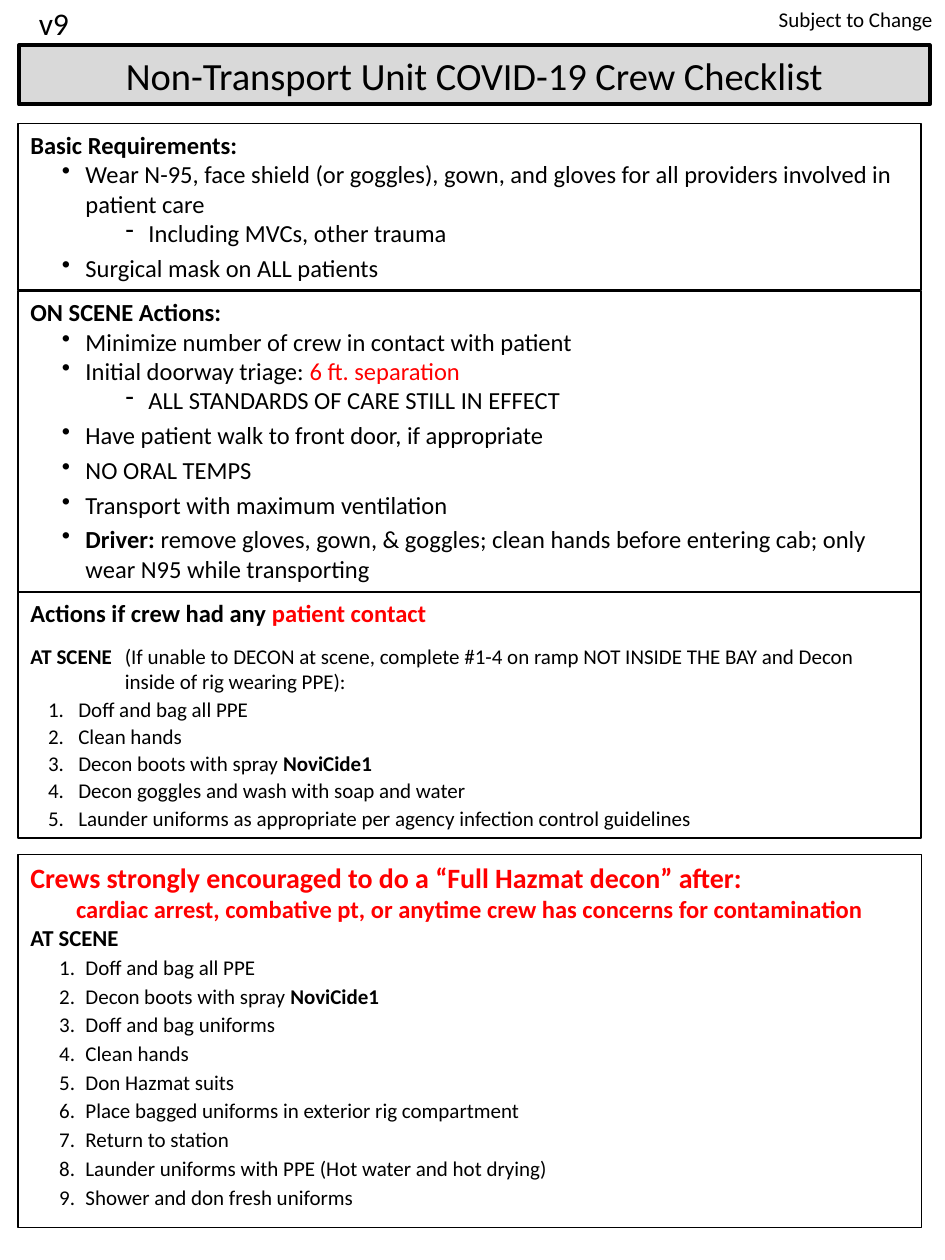
from collections import namedtuple

from lxml.etree import SubElement
from pptx import Presentation
from pptx.dml.color import RGBColor
from pptx.enum.shapes import MSO_SHAPE as Shape
from pptx.enum.text import MSO_ANCHOR as Anchor, PP_ALIGN as Align
from pptx.oxml.ns import qn
from pptx.util import Pt

BLACK, RED, GREY = "000000", "FF0000", "D9D9D9"

Look = namedtuple("Look", "size bold color align indent hang before bullet level",
                  defaults=(False, BLACK, Align.LEFT, 0, 0, 0, None, 0))

HEADING = Look(14, True)
BULLET = Look(14, indent=31.5, hang=13.5, bullet="•")
SPACED_BULLET = BULLET._replace(before=3)
DASH = Look(14, indent=67.5, hang=13, bullet="-", level=1)
SCENE_NOTE = Look(12, indent=54, hang=54, before=9)
STEP = Look(12, indent=27.4, hang=17.3, before=1.2, bullet="1.")
DECON_STEP = Look(12, indent=31.5, hang=15, before=2, bullet="1.")
WARNING = Look(16, True, RED)
WARNING_DETAIL = Look(14, True, RED, Align.CENTER)
SUBHEADING = Look(13, True)


def rgb(code):
    return RGBColor.from_string(code)


def bold(text):
    return text, {"bold": True}


def red(text):
    return text, {"color": RED}


class Sheet:
    def __init__(self, page, font):
        self.page = page
        self.font = font

    def paragraph(self, para, look, spans):
        para.alignment = look.align
        para.level = look.level
        if look.before:
            para.space_before = Pt(look.before)
        props = para._p.get_or_add_pPr()
        props.set("marL", str(Pt(look.indent)))
        props.set("indent", str(-Pt(look.hang)))
        if look.bullet == "1.":
            SubElement(props, qn("a:buAutoNum"), type="arabicPeriod")
        elif look.bullet:
            SubElement(props, qn("a:buChar"), char=look.bullet)
        for item in spans:
            text, changes = (item, {}) if isinstance(item, str) else item
            style = look._replace(**changes)
            span = para.add_run()
            span.text = text
            span.font.name = self.font
            span.font.size = Pt(style.size)
            span.font.bold = style.bold
            span.font.color.rgb = rgb(style.color)

    def fill_text(self, frame, lines):
        for number, (look, *spans) in enumerate(lines):
            para = frame.add_paragraph() if number else frame.paragraphs[0]
            self.paragraph(para, look, spans)

    def label(self, left, top, width, height, look, text, wrap=True):
        box = self.page.shapes.add_textbox(Pt(left), Pt(top), Pt(width), Pt(height))
        box.text_frame.word_wrap = wrap
        self.fill_text(box.text_frame, [(look, text)])

    def panel(self, left, top, width, height, lines, weight=1, fill=None, anchor=Anchor.TOP):
        box = self.page.shapes.add_shape(
            Shape.RECTANGLE, Pt(left), Pt(top), Pt(width), Pt(height))
        box.shadow.inherit = False
        if fill:
            box.fill.solid()
            box.fill.fore_color.rgb = rgb(fill)
        else:
            box.fill.background()
        box.line.color.rgb = rgb(BLACK)
        box.line.width = Pt(weight)
        box.text_frame.word_wrap = True
        box.text_frame.vertical_anchor = anchor
        self.fill_text(box.text_frame, lines)


BASICS = [
    (HEADING, "Basic Requirements:"),
    (BULLET, "Wear N-95, face shield (or goggles), gown, and gloves for all "
             "providers involved in patient care"),
    (DASH, "Including MVCs, other trauma"),
    (SPACED_BULLET, "Surgical mask on ALL patients"),
]
ON_SCENE = [
    (HEADING, "ON SCENE Actions:"),
    (BULLET, "Minimize number of crew in contact with patient"),
    (BULLET, "Initial doorway triage: ", red("6 ft. separation")),
    (DASH, "ALL STANDARDS OF CARE STILL IN EFFECT"),
    (SPACED_BULLET, "Have patient walk to front door, if appropriate"),
    (SPACED_BULLET, "NO ORAL TEMPS"),
    (SPACED_BULLET, "Transport with maximum ventilation"),
    (SPACED_BULLET, bold("Driver: "),
     "remove gloves, gown, & goggles; clean hands before entering cab; "
     "only wear N95 while transporting"),
]
CONTACT = [
    (HEADING, "Actions if crew had any ", red("patient contact")),
    (SCENE_NOTE, bold("AT SCENE"),
     "\t(If unable to DECON at scene, complete #1-4 on ramp NOT INSIDE THE BAY "
     "and Decon inside of rig wearing PPE):"),
    (STEP, "Doff and bag all PPE"),
    (STEP, "Clean hands"),
    (STEP, "Decon boots with spray ", bold("NoviCide1")),
    (STEP, "Decon goggles and wash with soap and water"),
    (STEP, "Launder uniforms as appropriate per agency infection control guidelines"),
]
FULL_DECON = [
    (WARNING, "Crews strongly encouraged to do a “Full Hazmat decon” after:"),
    (WARNING_DETAIL, "cardiac arrest, combative pt, or anytime crew has concerns "
                     "for contamination"),
    (SUBHEADING, "AT SCENE"),
    (DECON_STEP, "Doff and bag all PPE"),
    (DECON_STEP, "Decon boots with spray ", bold("NoviCide1")),
    (DECON_STEP, "Doff and bag uniforms"),
    (DECON_STEP, "Clean hands"),
    (DECON_STEP, "Don Hazmat suits"),
    (DECON_STEP, "Place bagged uniforms in exterior rig compartment"),
    (DECON_STEP, "Return to station"),
    (DECON_STEP, "Launder uniforms with PPE (Hot water and hot drying)"),
    (DECON_STEP, "Shower and don fresh uniforms"),
]


def main():
    deck = Presentation()
    deck.slide_width, deck.slide_height = Pt(540), Pt(720)
    sheet = Sheet(deck.slides.add_slide(deck.slide_layouts[6]), "Calibri")

    sheet.label(418.3, 0, 121.7, 21.6, Look(12, align=Align.RIGHT), "Subject to Change")
    sheet.label(15.1, -1.4, 31.7, 28.8, Look(18), "v9", wrap=False)
    sheet.panel(10.8, 25.9, 520.6, 33.8,
                [(Look(22, align=Align.CENTER), "Non-Transport Unit COVID-19 Crew Checklist")],
                weight=2.25, fill=GREY, anchor=Anchor.MIDDLE)

    left, width = 10.3, 516.2
    for top, height, lines, weight in [
        (70.6, 95, BASICS, 1),
        (166.3, 172.1, ON_SCENE, 1),
        (338.4, 140.4, CONTACT, 1),
        (488.2, 213.1, FULL_DECON, 0.75),
    ]:
        sheet.panel(left, top, width, height, lines, weight)

    deck.save("out.pptx")


if __name__ == "__main__":
    main()
